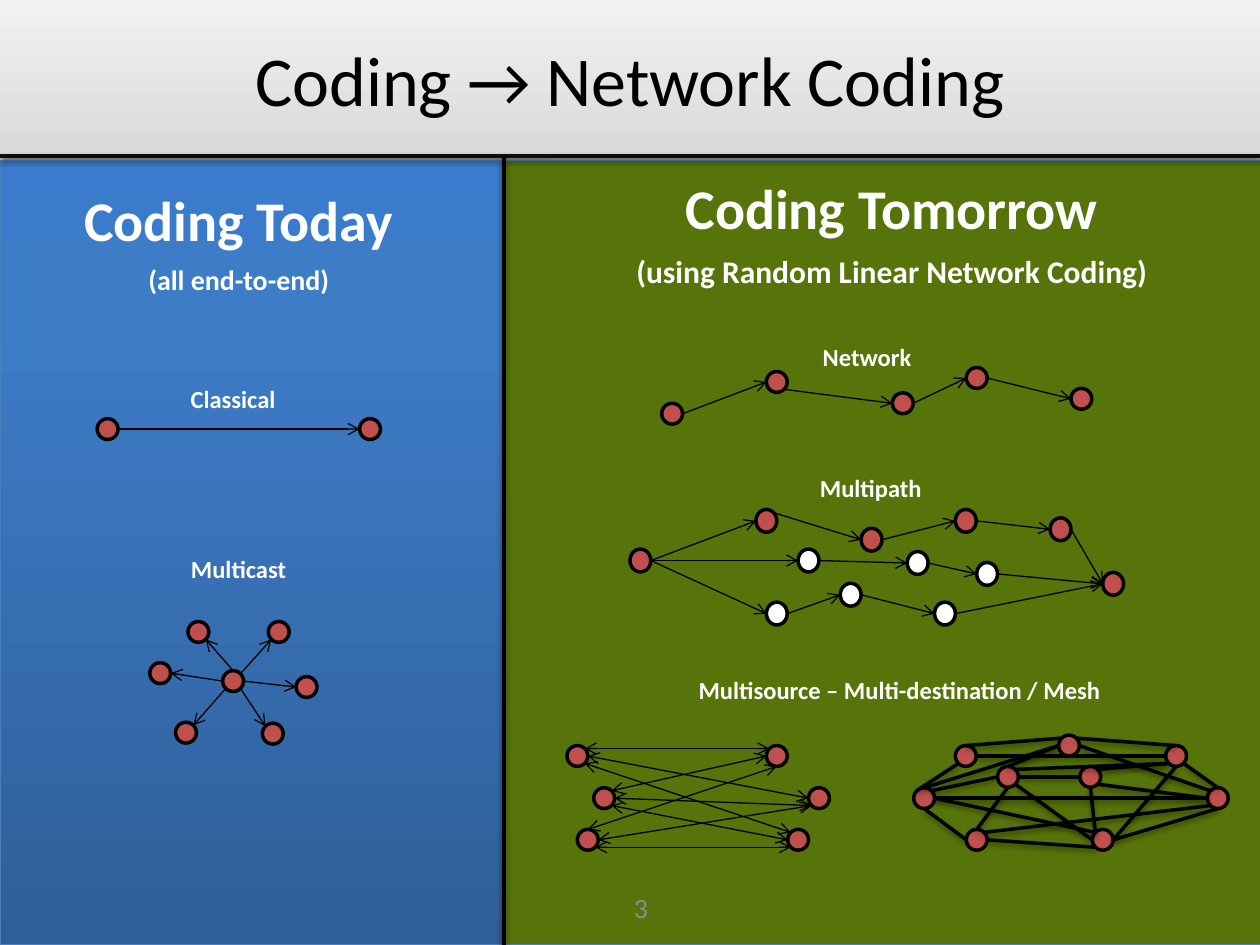
from dataclasses import dataclass
from typing import NamedTuple, Optional

from lxml.etree import SubElement
from pptx import Presentation
from pptx.dml.color import RGBColor
from pptx.enum.shapes import MSO_CONNECTOR, MSO_SHAPE
from pptx.enum.text import MSO_ANCHOR, MSO_AUTO_SIZE, PP_ALIGN
from pptx.oxml.ns import qn
from pptx.util import Cm, Pt

RECT, OVAL = MSO_SHAPE.RECTANGLE, MSO_SHAPE.OVAL
STRAIGHT = MSO_CONNECTOR.STRAIGHT
CENTER = PP_ALIGN.CENTER
TOP, MIDDLE = MSO_ANCHOR.TOP, MSO_ANCHOR.MIDDLE
FIT = MSO_AUTO_SIZE.SHAPE_TO_FIT_TEXT


class Shade(NamedTuple):
    alpha: int  # percent
    blur: float  # points
    dist: float


@dataclass(frozen=True)
class Theme:
    font: str = "Calibri"
    black: str = "000000"
    white: str = "FFFFFF"
    red: str = "C0504D"
    green: str = "57740A"
    edge: str = "4B7EBC"
    rule: str = "0D0D0D"
    gray: str = "8C8C8C"
    title: int = 40
    head: int = 32
    sub: int = 18
    small: int = 16
    label: int = 14
    thin: float = 0.75
    thick: float = 2
    deep: Shade = Shade(40, 4, 3)
    soft: Shade = Shade(35, 3.1, 1.8)
    dim: Shade = Shade(38, 3.1, 1.6)


T = Theme()


class Panel(NamedTuple):
    box: tuple  # left, top, width, height
    stops: tuple  # (percent, colour), from the bottom up
    shade: Shade
    edge: Optional[str] = None


class Line(NamedTuple):
    text: str
    size: int
    color: str = T.white
    bold: bool = True
    space: float = 1


@dataclass(frozen=True)
class Graph:
    nodes: dict  # letter: centre
    links: str  # letter and compass side at each end
    arrows: str = "tail"
    width: float = T.thin
    shade: Optional[Shade] = None
    tall: float = 0.42
    pale: str = ""  # letters of white nodes


PANELS = (
    Panel((0, 0, 25.4, 19.05), ((0, "D9D9D9"), (0, "95B3D7"), (61, "F2F2F2")), T.deep),
    Panel((0, 0, 25.4, 3.18), ((0, "D9D9D9"), (100, "F2F2F2")), T.deep),
    Panel((0, 3.23, 11, 15.82), ((0, "2F5F99"), (80, "3D7CC7"), (100, "3A7CCB")),
          T.soft, T.edge),
    Panel((10.16, 3.23, 15.34, 15.82), ((0, T.green),), T.soft, T.edge),
)

LABELS = (
    ("Classical", (3.58, 7.62, 2.24, 0.86)),
    ("Multicast", (3.58, 11.05, 2.46, 0.86)),
    ("Network", (16.31, 6.78, 2.34, 0.86)),
    ("Multipath", (16.26, 9.42, 2.59, 0.86)),
    ("Multisource – Multi-destination / Mesh", (13.79, 13.49, 8.69, 0.86)),
)

WIDE = 0.42  # node width
DIAG = 0.71
SIDES = {"n": (0, -1), "s": (0, 1), "w": (-1, 0), "e": (1, 0),
         "nw": (-DIAG, -DIAG), "ne": (DIAG, -DIAG),
         "sw": (-DIAG, DIAG), "se": (DIAG, DIAG)}

GRAPHS = (
    # Classical
    Graph({"A": (2.17, 8.65), "B": (7.46, 8.65)}, "Ae-Bw"),
    # Multicast
    Graph({"O": (4.7, 13.73), "A": (5.62, 12.74), "B": (5.5, 14.79), "C": (4, 12.74),
           "D": (3.75, 14.77), "E": (3.23, 13.57), "F": (6.18, 13.85)},
          "One-Asw Ose-Bnw On-Cse Osw-Dne Ow-Ee Oe-Fw"),
    # Network
    Graph({"A": (13.55, 8.34), "B": (15.66, 7.7), "C": (18.2, 8.13),
           "D": (19.69, 7.62), "E": (21.8, 8.04)},
          "Ae-Bw Bse-Cw Ce-Dw De-Ew"),
    # Multipath
    Graph({"S": (12.91, 11.3), "T": (22.44, 11.77),
           "A": (15.45, 10.5), "B": (17.57, 10.88), "C": (19.47, 10.5), "D": (21.38, 10.67),
           "E": (16.3, 11.3), "F": (18.5, 11.35), "G": (19.9, 11.57),
           "H": (15.66, 12.37), "I": (17.15, 11.99), "J": (19.05, 12.37)},
          "Se-Aw Ane-Bw Be-Cw Ce-Dw De-Tw Se-Ew Ee-Fw Fe-Gw Ge-Tw Se-Hw He-Iw Ie-Jw Je-Tw",
          tall=0.46, pale="EFGHIJ"),
    # Multisource to multi-destination
    Graph({"P": (11.64, 15.24), "Q": (12.18, 16.09), "R": (11.85, 16.93),
           "U": (15.66, 15.24), "V": (16.51, 16.09), "W": (16.09, 16.93)},
          "Pe-Vw Qe-Vsw Qse-Ww Rn-Us Qne-Uw Pse-Wnw Re-Vsw Rse-Wsw Pne-Unw",
          arrows="head tail"),
    # Mesh
    Graph({"A": (19.47, 15.24), "B": (21.55, 15.03), "C": (23.71, 15.24),
           "D": (20.32, 15.66), "E": (21.98, 15.66), "F": (18.63, 16.09),
           "G": (24.55, 16.09), "H": (19.69, 16.93), "I": (22.23, 16.93)},
          "Fe-Gw Be-Gnw Bne-Cn Ie-Gs Gsw-Hne An-Bnw Ae-Cw Asw-Fnw Fn-Bw Fne-Dw Bw-Dn De-Ew "
          "Dne-Csw Cse-Gn He-Isw Fs-Hw Fe-Inw Ds-Hn Dse-Iw Ie-Cs Csw-Ene Ese-Gw Es-Inw",
          arrows="", width=T.thick, shade=T.dim),
)


def rgb(code: str) -> RGBColor:
    return RGBColor.from_string(code)


def tint(parent, code: str):
    return SubElement(parent, qn("a:srgbClr"), val=code)


def cast(shape, shade: Optional[Shade]) -> None:
    """Give the shape this shadow, or none at all."""
    fx = SubElement(shape.element.spPr, qn("a:effectLst"))
    if shade:
        out = SubElement(fx, qn("a:outerShdw"), blurRad=str(Pt(shade.blur)),
                         dist=str(Pt(shade.dist)), dir="5400000", rotWithShape="0")
        SubElement(tint(out, T.black), qn("a:alpha"), val=str(shade.alpha * 1000))


def paint(shape, stops: tuple) -> None:
    if len(stops) == 1:
        shape.fill.solid()
        shape.fill.fore_color.rgb = rgb(stops[0][1])
        return
    shape.fill.gradient()
    shape.fill.gradient_angle = 90
    ramp = shape.element.spPr.find(".//" + qn("a:gsLst"))
    ramp.clear()
    for at, code in stops:
        tint(SubElement(ramp, qn("a:gs"), pos=str(at * 1000)), code)


def block(slide, kind, box: tuple, stops: tuple, edge: Optional[str],
          width: float, shade: Optional[Shade]) -> None:
    shape = slide.shapes.add_shape(kind, *map(Cm, box))
    paint(shape, stops)
    if edge:
        shape.line.color.rgb = rgb(edge)
        shape.line.width = Pt(width)
    else:
        shape.line.fill.background()
    cast(shape, shade)


def link(slide, start: tuple, end: tuple, color: str, width: float,
         shade: Optional[Shade], arrows: str = "") -> None:
    wire = slide.shapes.add_connector(STRAIGHT, *map(Cm, start + end))
    wire.line.color.rgb = rgb(color)
    wire.line.width = Pt(width)
    for end_name in arrows.split():
        SubElement(wire.element.spPr.find(qn("a:ln")), qn(f"a:{end_name}End"), type="arrow")
    cast(wire, shade)


def write(slide, box: tuple, *lines: Line, wrap: bool = False, anchor=TOP) -> None:
    frame = slide.shapes.add_textbox(*map(Cm, box)).text_frame
    frame.word_wrap = wrap
    frame.vertical_anchor = anchor
    if not wrap:
        frame.auto_size = FIT
    for i, line in enumerate(lines):
        para = frame.add_paragraph() if i else frame.paragraphs[0]
        para.text = line.text
        para.alignment = CENTER
        para.line_spacing = line.space
        font = para.font
        font.name, font.size, font.bold = T.font, Pt(line.size), line.bold
        font.color.rgb = rgb(line.color)


def draw(slide, graph: Graph) -> None:
    for name, (x, y) in graph.nodes.items():
        fill = T.white if name in graph.pale else T.red
        block(slide, OVAL, (x - WIDE / 2, y - graph.tall / 2, WIDE, graph.tall),
              ((0, fill),), T.black, T.thick, None)

    def spot(code: str) -> tuple:
        (x, y), (dx, dy) = graph.nodes[code[0]], SIDES[code[1:]]
        return x + dx * WIDE / 2, y + dy * graph.tall / 2

    for pair in graph.links.split():
        start, end = map(spot, pair.split("-"))
        link(slide, start, end, T.black, graph.width, graph.shade, graph.arrows)


def main() -> None:
    deck = Presentation()
    deck.slide_width, deck.slide_height = Cm(25.4), Cm(19.05)
    slide = deck.slides.add_slide(deck.slide_layouts[6])

    # Panels and rules
    for panel in PANELS:
        block(slide, RECT, panel.box, panel.stops, panel.edge, T.thin, panel.shade)
    link(slide, (0, 3.15), (25.4, 3.15), T.rule, T.thick, T.dim)
    link(slide, (10.16, 3.18), (10.16, 19.05), T.black, T.thick, T.dim)

    # Title and headings
    write(slide, (1.27, 0, 22.86, 3.18),
          Line("Coding → Network Coding", T.title, T.black, False), wrap=True, anchor=MIDDLE)
    write(slide, (1.35, 3.61, 6.93, 2.49), Line("Coding Today", T.head),
          Line("(all end-to-end)", T.small, space=1.3))
    write(slide, (12.52, 2.97, 10.92, 3), Line("Coding Tomorrow", T.head, space=1.3),
          Line("(using Random Linear Network Coding)", T.sub, space=1.3))

    # Diagrams and their labels
    for graph in GRAPHS:
        draw(slide, graph)
    for text, box in LABELS:
        write(slide, box, Line(text, T.label))

    # Page number
    write(slide, (9.96, 17.78, 5.92, 1.02), Line("3", T.small, T.gray, False),
          wrap=True, anchor=MIDDLE)
    deck.save("out.pptx")


if __name__ == "__main__":
    main()
